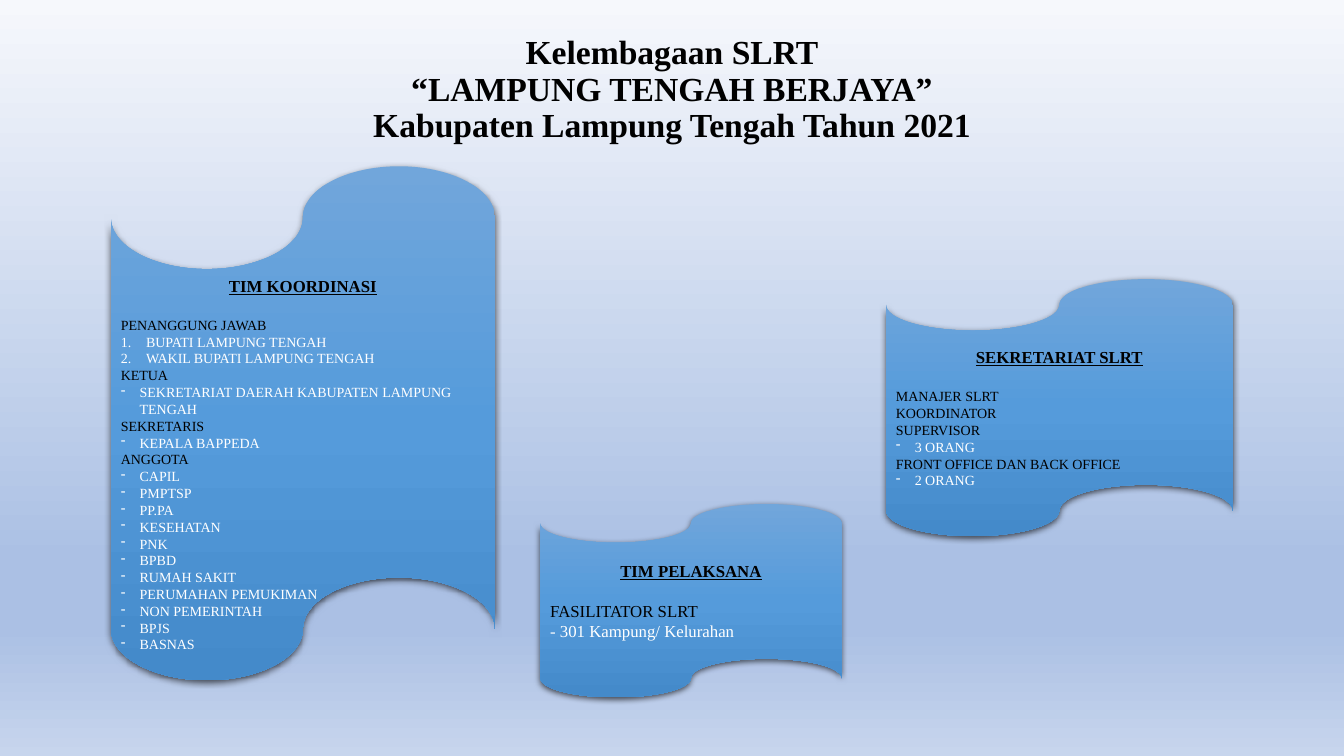
import pptx
import pptx.dml.color
import pptx.enum.shapes
import pptx.enum.text
import pptx.oxml
import pptx.oxml.ns
import pptx.util
from lxml import etree

Pt = pptx.util.Pt
qn = pptx.oxml.ns.qn
ALIGN = pptx.enum.text.PP_ALIGN
MIDDLE = pptx.enum.text.MSO_ANCHOR.MIDDLE
FONT = "Times New Roman"
GAP = 14.6  # height of one empty line

COLORS = {
    "black": "000000", "white": "FFFFFF",
    "sky": "F6F8FC", "haze": "ABC0E4", "floor": "C7D5ED",
    "tape_top": "71A6DB", "tape_mid": "559BDB", "tape_low": "448ACA",
}
PAGE_STOPS = [(0, "sky"), (74, "haze"), (83, "haze"), (100, "floor")]
TAPE_STOPS = [(0, "tape_top"), (50, "tape_mid"), (100, "tape_low")]

# Kind of line: (colour, hanging indent, bullet tag, bullet attributes)
KINDS = {
    "role": ("black", 0, None, {}),
    "plain": ("white", 0, None, {}),
    "number": ("white", 18, "a:buAutoNum", {"type": "arabicPeriod"}),
    "dash": ("white", 13.5, "a:buChar", {"char": "-"}),
}

TITLE = "Kelembagaan SLRT\v“LAMPUNG TENGAH BERJAYA”\vKabupaten Lampung Tengah Tahun 2021"
MEMBERS = ["CAPIL", "PMPTSP", "PP.PA", "KESEHATAN", "PNK", "BPBD", "RUMAH SAKIT",
           "PERUMAHAN PEMUKIMAN", "NON PEMERINTAH", "BPJS", "BASNAS"]

# Each team: box, heading, empty lines above the heading, text size, lines
TEAMS = [
    ((79.2, 118.8, 274.3, 367.2), "TIM KOORDINASI", 4, 10, [
        ("role", "PENANGGUNG JAWAB"),
        ("number", "BUPATI LAMPUNG TENGAH"),
        ("number", "WAKIL BUPATI LAMPUNG TENGAH"),
        ("role", "KETUA"),
        ("dash", "SEKRETARIAT DAERAH KABUPATEN LAMPUNG TENGAH"),
        ("role", "SEKRETARIS"),
        ("dash", "KEPALA BAPPEDA"),
        ("role", "ANGGOTA"),
        *(("dash", member) for member in MEMBERS),
    ]),
    ((632.9, 199.4, 247.7, 183.6), "SEKRETARIAT SLRT", 1, 10, [
        ("role", "MANAJER SLRT"),
        ("role", "KOORDINATOR"),
        ("role", "SUPERVISOR"),
        ("dash", "3 ORANG"),
        ("role", "FRONT OFFICE DAN BACK OFFICE"),
        ("dash", "2 ORANG"),
    ]),
    ((385.9, 360, 215.3, 138.2), "TIM PELAKSANA", 0, 12, [
        ("role", "FASILITATOR SLRT"),
        ("plain", "- 301 Kampung/ Kelurahan"),
    ]),
]


def write(para, text, size=10, color="black", bold=False, underline=False,
          align=ALIGN.LEFT, spacing=None, after=0):
    para.text = text
    para.alignment = align
    para.space_after = Pt(after)
    if spacing:
        para.line_spacing = spacing
    for span in para.runs:
        span.font.name = FONT
        span.font.size = Pt(size)
        span.font.bold = bold
        span.font.underline = underline
        span.font.color.rgb = pptx.dml.color.RGBColor.from_string(COLORS[color])


def paint_gradient(fill, owner, stops):
    """Fill from top to bottom with any number of stops."""
    fill.gradient()
    fill.gradient_angle = 270
    stop_list = next(owner.iter(qn("a:gsLst")))
    for stop in list(stop_list):
        stop_list.remove(stop)
    for percent, color in stops:
        stop = etree.SubElement(stop_list, qn("a:gs"), pos=str(percent * 1000))
        etree.SubElement(stop, qn("a:srgbClr"), val=COLORS[color])


def add_shadow(box):
    box.shadow.inherit = False
    effects = box._element.spPr.find(qn("a:effectLst"))
    shadow = etree.SubElement(effects, qn("a:outerShdw"), blurRad=str(Pt(4.5)),
                              dist=str(Pt(1.5)), dir="5400000", algn="ctr", rotWithShape="0")
    color = etree.SubElement(shadow, qn("a:srgbClr"), val=COLORS["black"])
    etree.SubElement(color, qn("a:alpha"), val="63000")


def add_bullet(para, indent, tag, attributes):
    properties = para._p.get_or_add_pPr()
    properties.set("marL", str(Pt(indent)))
    properties.set("indent", str(-Pt(indent)))
    etree.SubElement(properties, qn(tag), attributes)


def add_title(page, left, top, width, height):
    box = page.shapes.add_textbox(Pt(left), Pt(top), Pt(width), Pt(height))
    frame = box.text_frame
    frame.word_wrap = True
    frame.vertical_anchor = MIDDLE
    write(frame.paragraphs[0], TITLE, size=24, bold=True, align=ALIGN.CENTER, spacing=0.9)


def add_team(page, place, heading, lead, size, lines):
    tape = pptx.enum.shapes.MSO_SHAPE.FLOWCHART_PUNCHED_TAPE
    box = page.shapes.add_shape(tape, *(Pt(length) for length in place))
    paint_gradient(box.fill, box._element, TAPE_STOPS)
    box.line.fill.background()
    add_shadow(box)

    frame = box.text_frame
    frame.word_wrap = True
    frame.vertical_anchor = MIDDLE
    frame.margin_top = Pt(3.6 + lead * GAP)
    write(frame.paragraphs[0], heading, size=12, bold=True, underline=True,
          align=ALIGN.CENTER, after=GAP)
    for kind, text in lines:
        color, indent, tag, attributes = KINDS[kind]
        para = frame.add_paragraph()
        write(para, text, size=size, color=color)
        if tag:
            add_bullet(para, indent, tag, attributes)


def main():
    deck = pptx.Presentation()
    deck.slide_width, deck.slide_height = Pt(960), Pt(540)
    page = deck.slides.add_slide(deck.slide_layouts[6])
    paint_gradient(page.background.fill, page._element, PAGE_STOPS)
    add_title(page, 66, 16.6, 828, 95.8)
    for team in TEAMS:
        add_team(page, *team)
    deck.save("out.pptx")


if __name__ == "__main__":
    main()
